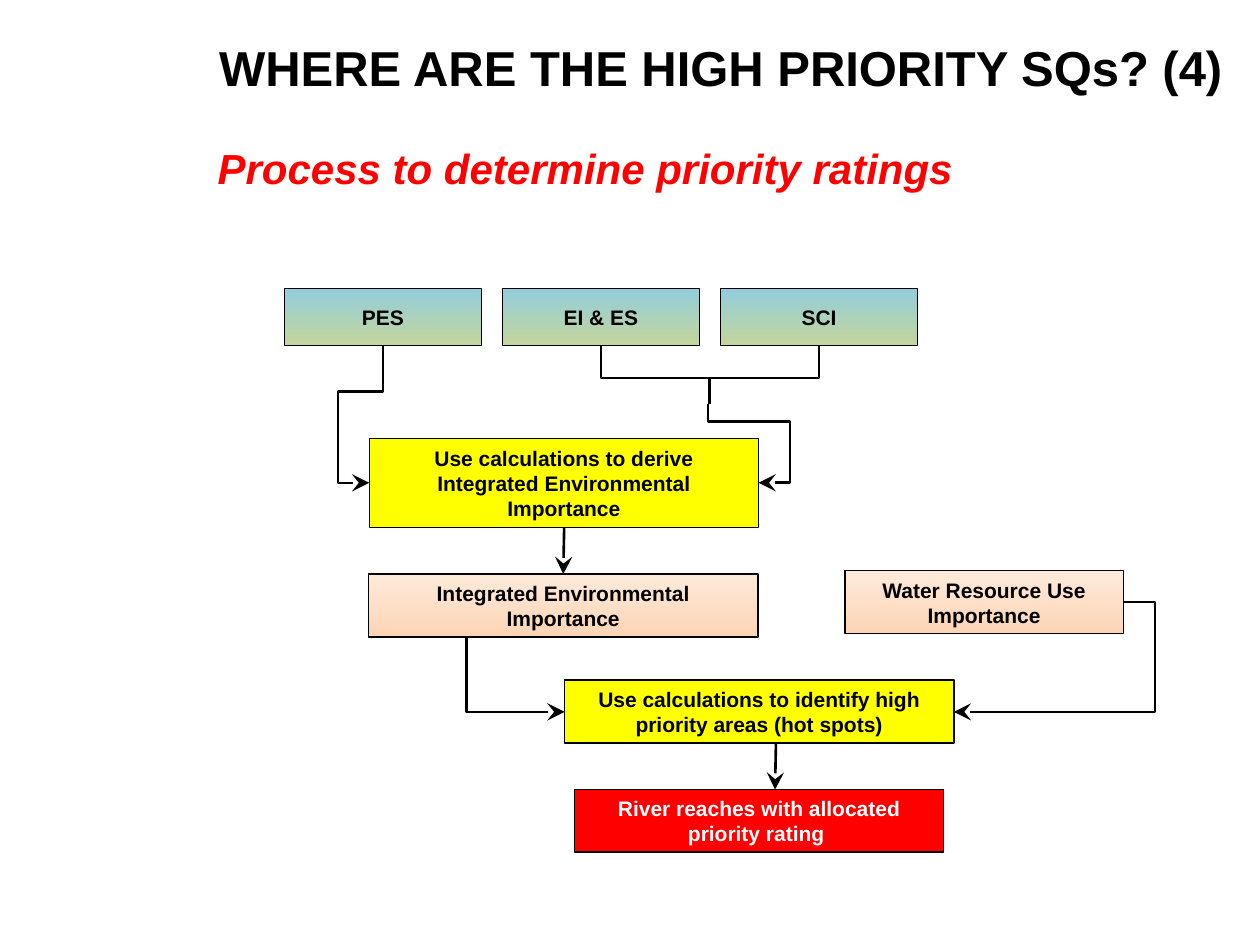
"""Build the slide on the process that determines priority ratings."""
from pptx import Presentation
from pptx.dml.color import RGBColor
from pptx.enum.shapes import MSO_CONNECTOR, MSO_SHAPE
from pptx.enum.text import MSO_ANCHOR, MSO_AUTO_SIZE, PP_ALIGN
from pptx.oxml.ns import qn
from pptx.util import Pt
from lxml.etree import SubElement

THEME = {
    "font": "Arial", "ink": "000000", "accent": "FF0000", "light": "FFFFFF",
    "title": 28, "subtitle": 24, "label": 12, "outline": 0.75, "flow": 1.5,
    "input": ("93CDDD", "C3D69B"), "calculation": ("FFFF00",),
    "importance": ("FDEADA", "FCD5B5"), "result": ("FF0000",),
}

TITLE = ("WHERE ARE THE HIGH PRIORITY SQs? (4)", (115.2, 18, 593.3, 74.9))
SUBTITLE = ("Process to determine priority ratings", (115.2, 77.8, 438.5, 36))

INPUTS = ["PES", "EI & ES", "SCI"]
INPUT_LEFT, INPUT_TOP, INPUT_WIDTH, INPUT_HEIGHT, INPUT_PITCH = 162.7, 164.9, 112.3, 32.4, 124.6

STEPS = [
    ("Use calculations to derive Integrated Environmental Importance",
     "calculation", (211, 250.6, 222.5, 50.9)),
    ("Water Resource Use Importance", "importance", (482.8, 326.2, 159.1, 36)),
    ("River reaches with allocated priority rating ", "result", (328.3, 451, 211, 36)),
    ("Integrated Environmental Importance", "importance", (210.6, 328, 222.5, 36)),
    ("Use calculations to identify high priority areas (hot spots)",
     "calculation", (322.6, 388.6, 222.5, 36)),
]

FLOWS = [
    {"start": (343.5, 197.3), "end": (468.1, 197.4), "via_y": 213.8},
    {"start": (218.9, 197.3), "end": (211, 275.9), "via_y": 223.9, "via_x": 193.1, "arrow": True},
    {"start": (404.6, 231.1), "end": (433.5, 275.9), "via_y": 240.8, "via_x": 451.5, "arrow": True},
    {"start": (405.3, 215.3), "end": (405.3, 231.1)},
    {"start": (211, 339), "end": (322.6, 406.8), "via_x": 266.6, "arrow": True},
    {"start": (642, 344.1), "end": (545.1, 406.8), "via_x": 660, "arrow": True},
    {"start": (322.4, 301.3), "end": (321.9, 328), "arrow": True},
    {"start": (443.4, 424.8), "end": (442.9, 451.2), "arrow": True},
]


def write(frame, text, *, size, color=THEME["ink"], italic=False, wrap=True,
          anchor=MSO_ANCHOR.TOP, grow=True):
    frame.text = text
    frame.word_wrap = wrap
    frame.vertical_anchor = anchor
    frame.auto_size = MSO_AUTO_SIZE.SHAPE_TO_FIT_TEXT if grow else MSO_AUTO_SIZE.NONE
    paragraph = frame.paragraphs[0]
    paragraph.alignment = PP_ALIGN.CENTER
    font = paragraph.runs[0].font
    font.name, font.size, font.bold, font.italic = THEME["font"], Pt(size), True, italic
    font.color.rgb = RGBColor.from_string(color)


def add_box(slide, text, role, place, **text_format):
    box = slide.shapes.add_shape(MSO_SHAPE.RECTANGLE, *map(Pt, place))
    box.shadow.inherit = False
    colors = [RGBColor.from_string(color) for color in THEME[role]]
    if len(colors) > 1:
        box.fill.gradient()
        box.fill.gradient_angle = 270
        for stop, color in zip(box.fill.gradient_stops, colors):
            stop.color.rgb = color
    else:
        box.fill.solid()
        box.fill.fore_color.rgb = colors[0]
    box.line.color.rgb = RGBColor.from_string(THEME["ink"])
    box.line.width = Pt(THEME["outline"])
    write(box.text_frame, text, size=THEME["label"], anchor=MSO_ANCHOR.MIDDLE,
          color=THEME["light" if role == "result" else "ink"], **text_format)


def add_elbow(slide, start, end, via_x, via_y):
    (x0, y0), (x1, y1) = start, end
    width, height = abs(x1 - x0), abs(y1 - y0)
    center_x, center_y = (x0 + x1) / 2, (y0 + y1) / 2
    bends = []
    if via_y is not None:
        width, height = height, width
        bends.append((via_y - y0) / (y1 - y0))
    if via_x is not None:
        bends.append((via_x - x0) / (x1 - x0))
    left, top = center_x - width / 2, center_y - height / 2
    elbow = slide.shapes.add_connector(
        MSO_CONNECTOR.ELBOW, *map(Pt, (left, top, left + width, top + height)))
    properties = elbow._element.spPr
    frame, geometry = properties.find(qn("a:xfrm")), properties.find(qn("a:prstGeom"))
    if via_y is not None:
        frame.set("rot", str((270 if x1 > x0 else 90) * 60000))
    if (x1 > x0) == (via_y is not None):
        frame.set("flipH", "1")
    geometry.set("prst", f"bentConnector{len(bends) + 2}")
    guides = geometry.find(qn("a:avLst"))
    for number, bend in enumerate(bends, 1):
        SubElement(guides, qn("a:gd"), name=f"adj{number}", fmla=f"val {round(bend * 100000)}")
    return elbow


def add_flow(slide, start, end, via_x=None, via_y=None, arrow=False):
    if via_x is None and via_y is None:
        flow = slide.shapes.add_connector(MSO_CONNECTOR.STRAIGHT, *map(Pt, start + end))
    else:
        flow = add_elbow(slide, start, end, via_x, via_y)
    flow.line.color.rgb = RGBColor.from_string(THEME["ink"])
    flow.line.width = Pt(THEME["flow"])
    properties = flow._element.spPr
    if arrow:
        SubElement(properties.find(qn("a:ln")), qn("a:tailEnd"), type="stealth", w="lg", len="lg")
    SubElement(properties, qn("a:effectLst"))


def main():
    deck = Presentation()
    deck.slide_width, deck.slide_height = Pt(720), Pt(540)
    slide = deck.slides.add_slide(deck.slide_layouts[5])

    text, place = TITLE
    title = slide.shapes.title
    title.left, title.top, title.width, title.height = map(Pt, place)
    write(title.text_frame, text, size=THEME["title"])

    for column, label in enumerate(INPUTS):
        left = INPUT_LEFT + column * INPUT_PITCH
        add_box(slide, label, "input", (left, INPUT_TOP, INPUT_WIDTH, INPUT_HEIGHT),
                wrap=False, grow=False)
    for flow in FLOWS:
        add_flow(slide, **flow)
    for label, role, place in STEPS:
        add_box(slide, label, role, place)

    text, place = SUBTITLE
    subtitle = slide.shapes.add_textbox(*map(Pt, place))
    write(subtitle.text_frame, text, size=THEME["subtitle"], color=THEME["accent"],
          italic=True, wrap=False)
    deck.save("out.pptx")


if __name__ == "__main__":
    main()
